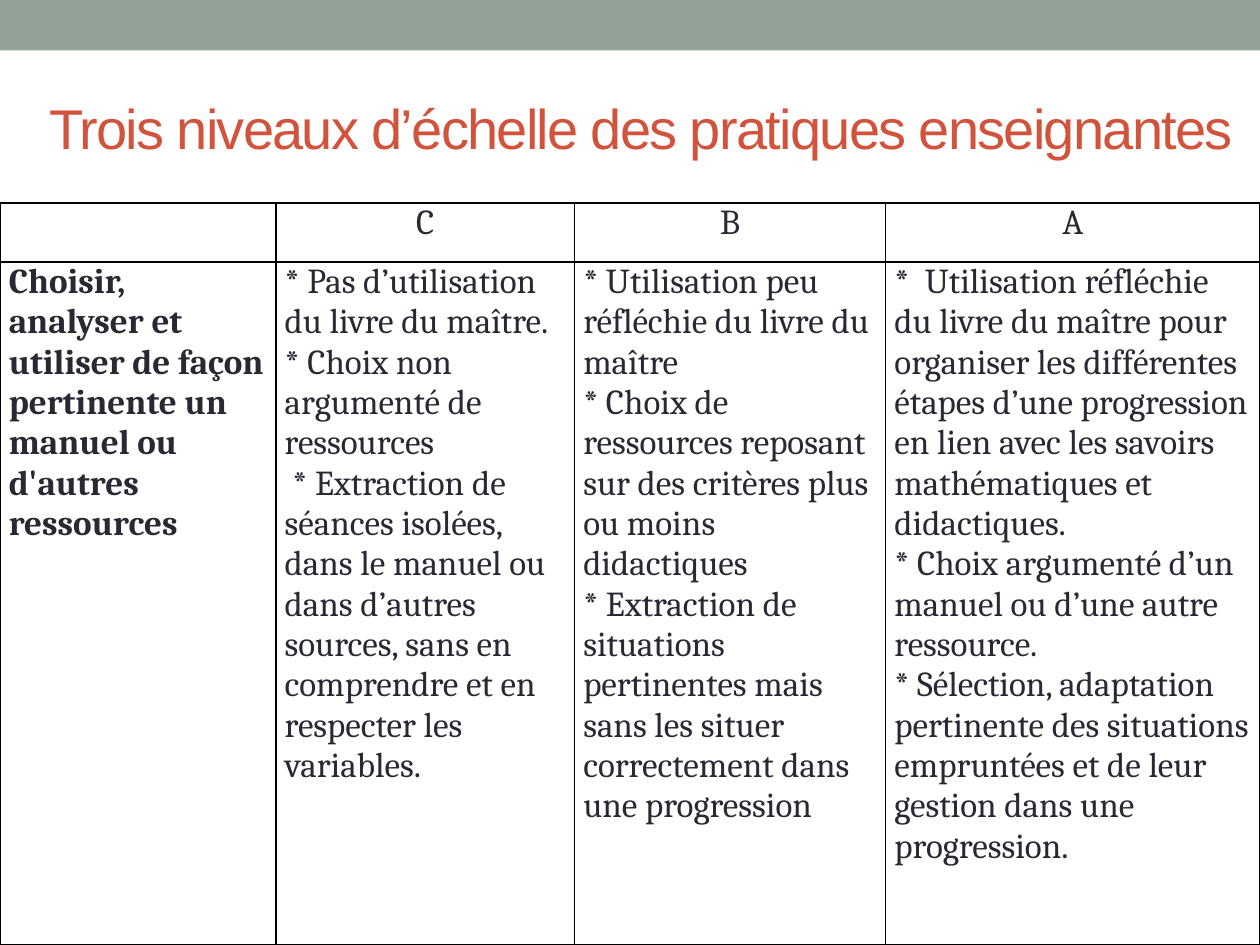
from dataclasses import dataclass

from lxml import etree
from pptx import Presentation
from pptx.dml.color import RGBColor
from pptx.enum.shapes import MSO_SHAPE
from pptx.enum.text import MSO_ANCHOR, PP_ALIGN
from pptx.oxml.ns import qn
from pptx.util import Inches, Pt

RECTANGLE = MSO_SHAPE.RECTANGLE
TOP = MSO_ANCHOR.TOP
LEFT, CENTER = PP_ALIGN.LEFT, PP_ALIGN.CENTER


@dataclass(frozen=True)
class Theme:
    band: str = "93A299"
    title: str = "D2533C"
    body: str = "292934"
    paper: str = "FFFFFF"
    rule: str = "000000"
    title_font: str = "Arial"
    body_font: str = "Cambria"
    title_size: int = 32
    body_size: int = 20
    rule_width: int = 1


TITLE = "Trois niveaux d’échelle des pratiques enseignantes"
LEVELS = ["C", "B", "A"]
SKILL = "Choisir, analyser et utiliser de façon pertinente un manuel ou d'autres ressources"
PRACTICES = [
    [
        "* Pas d’utilisation du livre du maître.",
        "* Choix non argumenté de ressources",
        " * Extraction de séances isolées, dans le manuel ou dans d’autres sources, "
        "sans en comprendre et en respecter les variables.",
    ],
    [
        "* Utilisation peu réfléchie du livre du maître",
        "* Choix de ressources reposant sur des critères plus ou moins didactiques",
        "* Extraction de situations pertinentes mais sans les situer correctement "
        "dans une progression",
    ],
    [
        "*  Utilisation réfléchie du livre du maître pour organiser les différentes étapes "
        "d’une progression en lien avec les savoirs mathématiques et didactiques.",
        "* Choix argumenté d’un manuel ou d’une autre ressource.",
        "* Sélection, adaptation pertinente des situations empruntées et de leur gestion "
        "dans une progression.",
    ],
]
COLUMN_WIDTHS = [2.19, 2.37, 2.47, 2.97]
ROW_HEIGHTS = [0.47, 5.42]


def write_text(frame, paragraphs, *, font, size, color, bold=False, align=LEFT,
               space_after=0, tracking=None):
    """Fill a text frame, one paragraph per string; tracking is in points."""
    frame.word_wrap = True
    for index, content in enumerate(paragraphs):
        paragraph = frame.paragraphs[0] if index == 0 else frame.add_paragraph()
        paragraph.alignment = align
        paragraph.space_after = Pt(space_after)
        run = paragraph.add_run()
        run.text = content
        run.font.name = font
        run.font.size = Pt(size)
        run.font.bold = bold
        run.font.color.rgb = RGBColor.from_string(color)
        if tracking is not None:
            run.font._element.set("spc", str(int(tracking * 100)))


class SlideBuilder:
    def __init__(self, slide, theme):
        self.slide = slide
        self.theme = theme

    def band(self, left, top, width, height):
        shape = self.slide.shapes.add_shape(
            RECTANGLE, Inches(left), Inches(top), Inches(width), Inches(height))
        shape.shadow.inherit = False
        shape.fill.solid()
        shape.fill.fore_color.rgb = RGBColor.from_string(self.theme.band)
        shape.line.fill.background()

    def title(self, text, left, top, width, height):
        frame = self.slide.shapes.add_textbox(
            Inches(left), Inches(top), Inches(width), Inches(height)).text_frame
        frame.vertical_anchor = TOP
        write_text(frame, [text], font=self.theme.title_font, size=self.theme.title_size,
                   color=self.theme.title, align=CENTER, tracking=-1)

    def table(self, left, top, widths, heights):
        table = self.slide.shapes.add_table(
            len(heights), len(widths), Inches(left), Inches(top),
            Inches(sum(widths)), Inches(sum(heights))).table
        table.first_row = table.horz_banding = False
        for column, width in zip(table.columns, widths):
            column.width = Inches(width)
        for row, height in zip(table.rows, heights):
            row.height = Inches(height)
        for cell in table.iter_cells():
            self.style_cell(cell)
        return table

    def style_cell(self, cell):
        cell.margin_left = cell.margin_right = Inches(0.07)
        cell.margin_top = cell.margin_bottom = 0
        properties = cell._tc.get_or_add_tcPr()
        for side in ("lnL", "lnR", "lnT", "lnB"):
            line = etree.SubElement(properties, qn(f"a:{side}"),
                                    w=str(Pt(self.theme.rule_width)))
            fill = etree.SubElement(line, qn("a:solidFill"))
            etree.SubElement(fill, qn("a:srgbClr"), val=self.theme.rule)
        cell.fill.solid()
        cell.fill.fore_color.rgb = RGBColor.from_string(self.theme.paper)

    def cell_text(self, cell, paragraphs, **style):
        write_text(cell.text_frame, paragraphs, font=self.theme.body_font,
                   size=self.theme.body_size, color=self.theme.body, **style)


def main():
    deck = Presentation()
    deck.slide_width, deck.slide_height = Inches(10), Inches(7.5)
    builder = SlideBuilder(deck.slides.add_slide(deck.slide_layouts[6]), Theme())

    builder.band(0, 0, 10, 0.4)
    grid = builder.table(0, 1.61, COLUMN_WIDTHS, ROW_HEIGHTS)
    builder.cell_text(grid.cell(1, 0), [SKILL], bold=True, space_after=12)
    for column, (level, practices) in enumerate(zip(LEVELS, PRACTICES), start=1):
        builder.cell_text(grid.cell(0, column), [level], align=CENTER)
        builder.cell_text(grid.cell(1, column), practices)
    builder.title(TITLE, 0.18, 0.69, 9.82, 1.03)

    deck.save("out.pptx")


if __name__ == "__main__":
    main()
